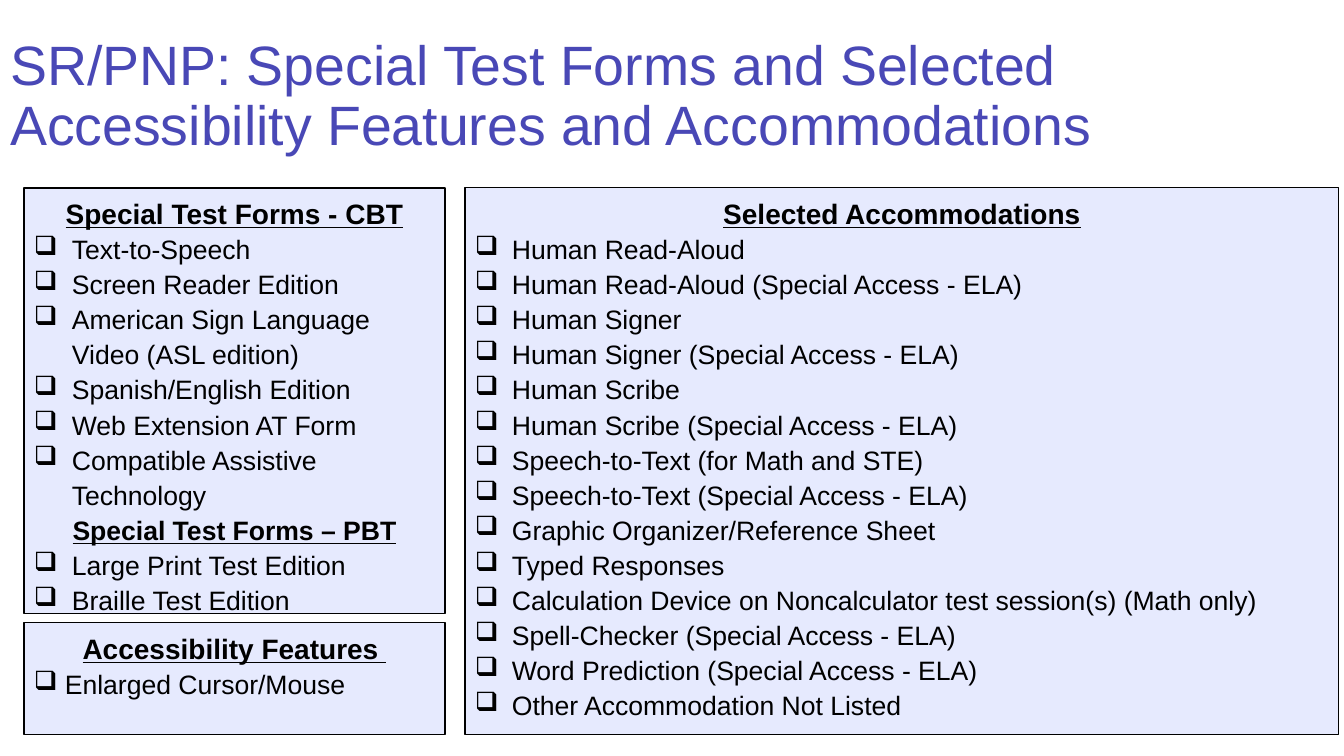
import pptx
import pptx.util
import pptx.dml.color
import pptx.enum.shapes
import pptx.enum.text
from lxml import etree

TITLE = "SR/PNP: Special Test Forms and Selected Accessibility Features and Accommodations"
TITLE_BOX = (0, 40, 1339, 115)

# Each section: heading, heading size in pt, checklist items
CBT = ("Special Test Forms - CBT", 20, [
    "Text-to-Speech",
    "Screen Reader Edition",
    "American Sign Language Video (ASL edition)",
    "Spanish/English Edition",
    "Web Extension AT Form",
    "Compatible Assistive Technology",
])
PBT = ("Special Test Forms – PBT", 19, [
    "Large Print Test Edition",
    "Braille Test Edition",
])
FEATURES = ("Accessibility Features ", 20, ["Enlarged Cursor/Mouse"])
ACCOMMODATIONS = ("Selected Accommodations", 20, [
    "Human Read-Aloud",
    "Human Read-Aloud (Special Access - ELA)",
    "Human Signer",
    "Human Signer (Special Access - ELA)",
    "Human Scribe",
    "Human Scribe (Special Access - ELA)",
    "Speech-to-Text (for Math and STE)",
    "Speech-to-Text (Special Access - ELA)",
    "Graphic Organizer/Reference Sheet",
    "Typed Responses",
    "Calculation Device on Noncalculator test session(s) (Math only)",
    "Spell-Checker (Special Access - ELA)",
    "Word Prediction (Special Access - ELA)",
    "Other Accommodation Not Listed",
])

# Panels in px: left, top, width, height, bullet indent, sections
PANELS = [
    (24, 188, 421, 426, 38, [CBT, PBT]),
    (24, 623, 421, 112, 31, [FEATURES]),
    (465, 188, 874, 547, 37, [ACCOMMODATIONS]),
]
COLORS = {"title": "4948B6", "panel": "E6EAFE", "ink": "000000"}
HEADING = {"bold": True, "underline": True}
ITEM = {"bold": False, "underline": False}
ITEM_SIZE = 19
PX_PER_INCH = 100.8
ALIGN = pptx.enum.text.PP_ALIGN


def px(n):
    return pptx.util.Emu(round(n * 914400 / PX_PER_INCH))


def rgb(name):
    return pptx.dml.color.RGBColor.from_string(COLORS[name])


def place(sp, box):
    for name, n in zip(("left", "top", "width", "height"), box):
        setattr(sp, name, px(n))


def style(p, text, size, color, spacing, align, **formats):
    p.text = text
    p.line_spacing = spacing
    p.alignment = align
    font = p.runs[0].font
    font.color.rgb = rgb(color)
    values = {"name": "Arial", "size": pptx.util.Pt(size), **formats}
    for name, value in values.items():
        setattr(font, name, value)


def add_bullet(p, indent):
    pPr = p._p.get_or_add_pPr()
    pPr.set("marL", str(px(indent)))
    pPr.set("indent", str(-px(indent)))
    bullet = etree.SubElement(pPr, pptx.oxml.ns.qn("a:buChar"))
    bullet.set("char", "❑")


def add_panel(slide, box, indent, sections):
    sp = slide.shapes.add_shape(
        pptx.enum.shapes.MSO_SHAPE.RECTANGLE, *map(px, box))
    sp.shadow.inherit = False
    sp.fill.solid()
    sp.fill.fore_color.rgb = rgb("panel")
    sp.line.color.rgb = rgb("ink")
    sp.line.width = pptx.util.Pt(0.75)
    tf = sp.text_frame
    tf.word_wrap = True
    tf.vertical_anchor = pptx.enum.text.MSO_ANCHOR.TOP
    p = tf.paragraphs[0]
    for number, (heading, size, items) in enumerate(sections):
        if number:
            p = tf.add_paragraph()
        style(p, heading, size, "ink", 1.1, ALIGN.CENTER, **HEADING)
        for item in items:
            p = tf.add_paragraph()
            style(p, item, ITEM_SIZE, "ink", 1.1, ALIGN.LEFT, **ITEM)
            add_bullet(p, indent)


def main():
    prs = pptx.Presentation()
    prs.slide_width, prs.slide_height = px(1344), px(756)
    slide = prs.slides.add_slide(prs.slide_layouts[5])

    # Title
    title = slide.shapes.title
    place(title, TITLE_BOX)
    tf = title.text_frame
    tf.word_wrap = True
    tf.auto_size = pptx.enum.text.MSO_AUTO_SIZE.NONE
    tf.vertical_anchor = pptx.enum.text.MSO_ANCHOR.MIDDLE
    style(tf.paragraphs[0], TITLE, 39.6, "title", 0.9, ALIGN.LEFT)

    # Checklist panels
    for *box, indent, sections in PANELS:
        add_panel(slide, box, indent, sections)

    prs.save("out.pptx")


if __name__ == "__main__":
    main()
